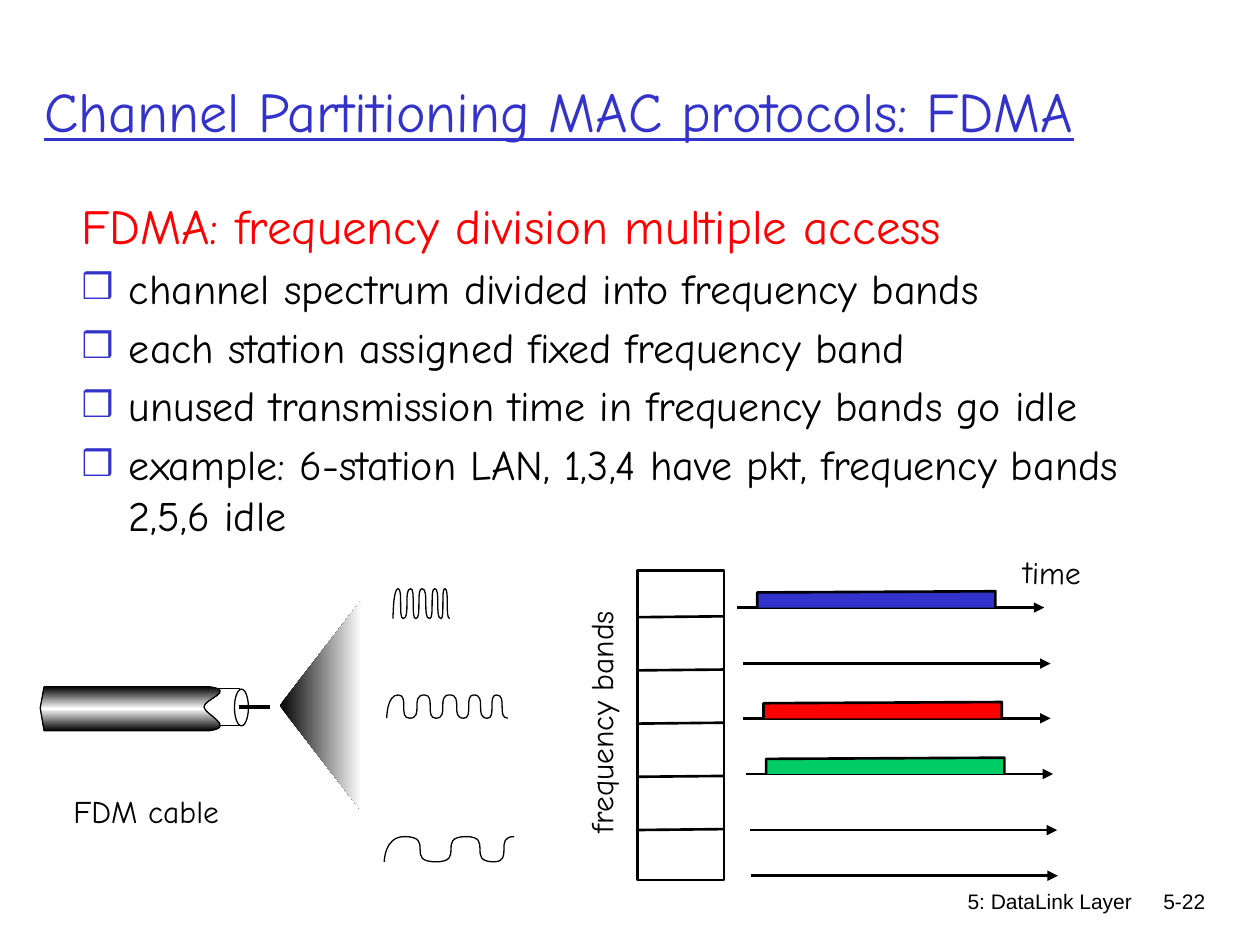
import copy

import pptx
import pptx.dml.color
import pptx.enum.shapes
import pptx.enum.text
import pptx.oxml
import pptx.oxml.ns
import pptx.util
from lxml import etree

Pt = pptx.util.Pt
RGB = pptx.dml.color.RGBColor
SHAPE = pptx.enum.shapes.MSO_SHAPE
ALIGN = pptx.enum.text.PP_ALIGN
qn = pptx.oxml.ns.qn

BLACK = RGB(0x00, 0x00, 0x00)
WHITE = RGB(0xFF, 0xFF, 0xFF)
BLUE = RGB(0x33, 0x33, 0xCC)
RED = RGB(0xFF, 0x00, 0x00)
GREEN = RGB(0x00, 0xCC, 0x66)
COMIC = "Comic Neue"

prs = pptx.Presentation()
prs.slide_width, prs.slide_height = Pt(720), Pt(540)
slide = prs.slides.add_slide(prs.slide_layouts[5])
shapes = slide.shapes


def add_outline(start, segments, line_width, closed=False):
    """Freeform of segments: one point is a line, three points are a Bezier curve."""
    builder = shapes.build_freeform(*map(Pt, start))
    points = [(Pt(x), Pt(y)) for segment in segments for x, y in segment]
    builder.add_line_segments(points, close=closed)
    s = builder.convert_to_shape()
    steps = iter(s._element.spPr.findall(".//" + qn("a:lnTo")))
    for segment in segments:
        first = next(steps)
        if len(segment) == 3:
            first.tag = qn("a:cubicBezTo")
            for step in (next(steps), next(steps)):
                first.append(step[0])
                step.getparent().remove(step)
    s.shadow.inherit = False
    s.fill.background()
    if line_width:
        s.line.color.rgb = BLACK
        s.line.width = Pt(line_width)
    else:
        s.line.fill.background()
    return s


# Title
title = shapes.title
for name, value in {"left": 18, "top": 18, "width": 680, "height": 90}.items():
    setattr(title, name, Pt(value))
tf = title.text_frame
tf.text = "Channel Partitioning MAC protocols: FDMA"
tf.vertical_anchor = pptx.enum.text.MSO_ANCHOR.MIDDLE
tf.auto_size = pptx.enum.text.MSO_AUTO_SIZE.NONE
p = tf.paragraphs[0]
p.alignment = ALIGN.LEFT
r = p.runs[0]
for name, value in {"name": COMIC, "size": Pt(32), "underline": True}.items():
    setattr(r.font, name, value)
r.font.color.rgb = BLUE

# Body
tf = shapes.add_textbox(Pt(39.6), Pt(108), Pt(647), Pt(366)).text_frame
tf.word_wrap = True
body = [
    ("FDMA: frequency division multiple access", 28, RED),
    ("channel spectrum divided into frequency bands", 24, BLACK),
    ("each station assigned fixed frequency band", 24, BLACK),
    ("unused transmission time in frequency bands go idle", 24, BLACK),
    ("example: 6-station LAN, 1,3,4 have pkt, frequency bands 2,5,6 idle", 24, BLACK),
]
for i, (text, size, color) in enumerate(body):
    p = tf.add_paragraph() if i else tf.paragraphs[0]
    p.space_before = Pt(size * 0.2)
    r = p.add_run()
    r.text = text
    r.font.name, r.font.size = COMIC, Pt(size)
    r.font.color.rgb = color
    pPr = p._p.get_or_add_pPr()
    pPr.set("marL", str(Pt(27)))
    pPr.set("indent", str(Pt(-27)))
    if i:
        bullet_color = etree.SubElement(pPr, qn("a:buClr"))
        etree.SubElement(bullet_color, qn("a:srgbClr"), val=str(BLUE))
        etree.SubElement(pPr, qn("a:buSzPct"), val="85000")
        etree.SubElement(pPr, qn("a:buFont"), typeface="Arial")
        etree.SubElement(pPr, qn("a:buChar"), char="❒")

# Labels: text, box, font, size, alignment, wrap, rotation
labels = [
    ("5: DataLink Layer", (426, 504, 228, 36), "Arial", 12, ALIGN.RIGHT, True, 0),
    ("5-22", (643, 504, 52.8, 36), "Arial", 12, ALIGN.RIGHT, True, 0),
    ("frequency bands", (267, 392.4, 152.6, 28.8), COMIC, 18, ALIGN.LEFT, False, 270),
    ("time", (577.5, 312.5, 51.8, 28.8), COMIC, 18, ALIGN.LEFT, False, 1.1),
    ("FDM cable", (34.8, 449.3, 103.7, 28.8), COMIC, 18, ALIGN.LEFT, False, 0),
]
for text, box, font, size, align, wrap, rotation in labels:
    s = shapes.add_textbox(*map(Pt, box))
    s.rotation = rotation
    tf = s.text_frame
    tf.word_wrap = wrap
    p = tf.paragraphs[0]
    p.alignment = align
    r = p.add_run()
    r.text = text
    r.font.name, r.font.size = font, Pt(size)
    r.font.color.rgb = BLACK

# Spreading beam and cable sheath, both with gradients
beam = add_outline((206.6, 342.7), [[(159.8, 403.2)], [(206.6, 463.7)]], 0, closed=True)
s = shapes.add_shape(SHAPE.RECTANGLE, Pt(116), Pt(393.3), Pt(21), Pt(21.4))
plain = [(s, 0.75)]
sheath = add_outline((25.2, 392.4), [
    [(23, 404.6)],
    [(25.2, 417.6)],
    [(119.5, 417.6)],
    [(135.4, 415.4), (116.6, 408.2), (116.6, 403.9)],
    [(116.6, 399.6), (135.4, 394.6), (119.5, 392.4)],
], 0.75, closed=True)
for s, angle, colors in [(beam, 0, (BLACK, WHITE)), (sheath, 90, (BLACK, WHITE, BLACK))]:
    s.fill.gradient()
    s.fill.gradient_angle = angle
    stop_list = s._element.spPr.find(".//" + qn("a:gsLst"))
    while len(stop_list) < len(colors):
        stop_list.append(copy.deepcopy(stop_list[-1]))
    for i, (stop, color) in enumerate(zip(s.fill.gradient_stops, colors)):
        stop.position = i / (len(colors) - 1)
        stop.color.rgb = color

# Cable end and frequency column
s = shapes.add_shape(SHAPE.OVAL, Pt(134), Pt(393.8), Pt(8), Pt(21))
plain.append((s, 0.75))
s = shapes.add_shape(SHAPE.RECTANGLE, Pt(364.2), Pt(326), Pt(49.6), Pt(177))
plain.append((s, 1.5))
for s, width in plain:
    s.shadow.inherit = False
    s.fill.solid()
    s.fill.fore_color.rgb = WHITE
    s.line.color.rgb = BLACK
    s.line.width = Pt(width)

# Straight lines: start, end, width, arrow
AXIS_LENGTH = 175.5
axes = [(421.2, 347.2, BLUE), (424.8, 379.2, None), (424.8, 410.5, RED),
        (426.3, 442.3, GREEN), (428.6, 474.4, None), (429, 500.4, None)]
lines = [(136.8, 403.9, 154.1, 403.9, 2.25, False)]
for i in range(5):
    y = 352.7 + 30.4 * i
    lines.append((364.2, y, 413.6, y - 0.5, 1.5, False))
for x, y, color in axes:
    lines.append((x, y, x + AXIS_LENGTH, y, 1.5, True))
for x1, y1, x2, y2, width, arrow in lines:
    s = shapes.add_connector(pptx.enum.shapes.MSO_CONNECTOR.STRAIGHT,
                             Pt(x1), Pt(y1), Pt(x2), Pt(y2))
    s.line.color.rgb = BLACK
    s.line.width = Pt(width)
    spPr = s._element.spPr
    if arrow:
        etree.SubElement(spPr.find(qn("a:ln")), qn("a:tailEnd"), type="triangle")
    etree.SubElement(spPr, qn("a:effectLst"))

# Busy bands
for x, y, color in axes:
    if color is not None:
        left, right = x + 11.5, x + 147.6
        s = add_outline((left, y), [[(left, y - 8.6)], [(right, y - 9.3)], [(right, y)]], 1.5)
        s.fill.solid()
        s.fill.fore_color.rgb = color

# Waves: crest y, trough y, x of the start and of each turn
waves = [
    (336.4, 353.5, (224.6, 227.5, 230.4, 234.7, 237.6, 241.2, 245.5, 248.4, 252, 254.2, 257)),
    (397.1, 410.4, (221, 227.5, 234, 242.6, 249.1, 257, 265, 270.7, 278.6, 283.7, 290.2)),
    (478.1, 492.5, (219.6, 231.1, 249.1, 266.4, 282.2, 293.8)),
]
for crest, trough, turns in waves:
    segments = []
    for i, (x1, x2) in enumerate(zip(turns, turns[1:])):
        y1, y2 = (crest, trough) if i % 2 else (trough, crest)
        segments.append([(x2 if i else x1, y1), (x1, y2), (x2, y2)])
    add_outline((turns[0], trough), segments, 0.75)

prs.save("out.pptx")
